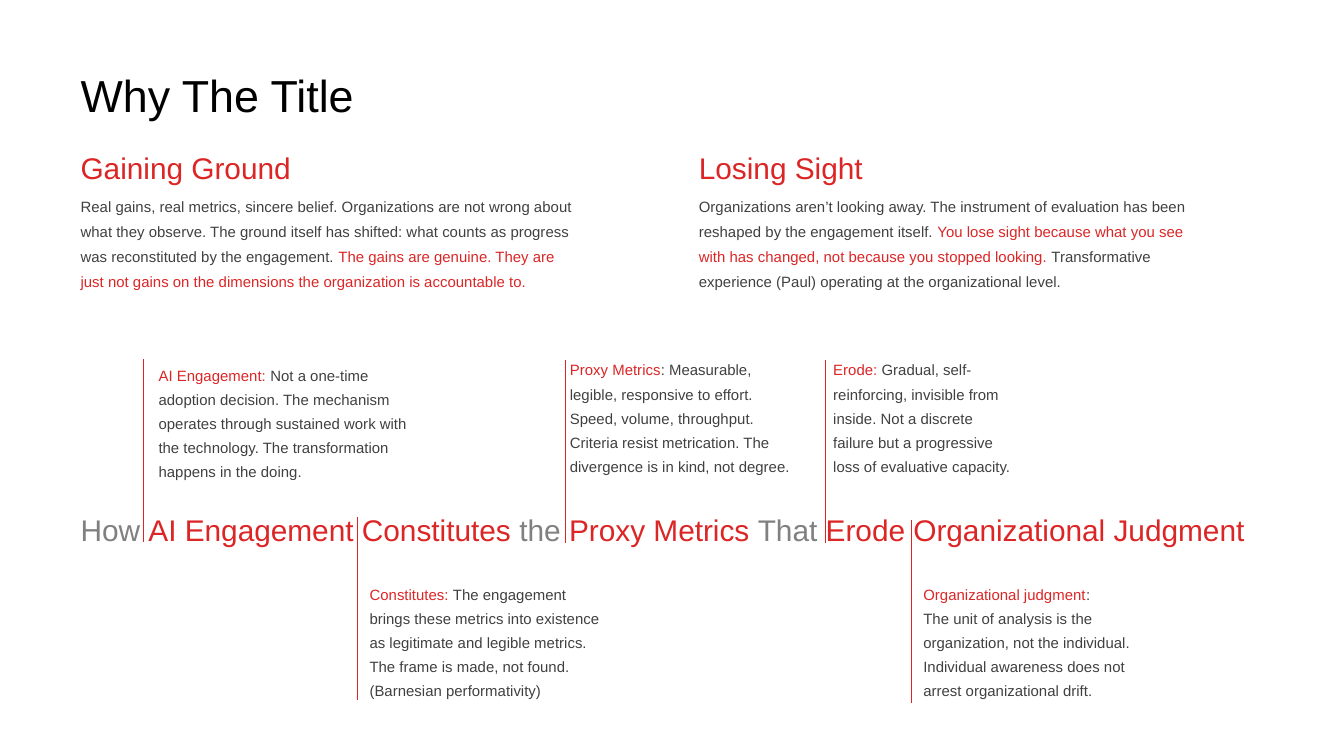
from lxml import etree
from pptx import Presentation
from pptx import util as u
from pptx.dml import color
from pptx.enum import shapes, text
from pptx.oxml import ns

COLOURS = {"title": "000000", "accent": "DC2525", "body": "404040", "muted": "808080"}
CELL = 0.1  # inches per grid column and row
LEFT, RIGHT = 6, 52  # columns where the two upper sections start


def grid(cells):
    return u.Inches(cells * CELL)


def add_span(para, words, size=8, colour="body", font="Arial"):
    span = para.add_run()
    span.text = words
    span.font.size = u.Pt(size)
    span.font.name = font
    span.font.color.rgb = color.RGBColor.from_string(COLOURS[colour])


class Slide:
    """Holds the text style and the current page."""

    def __init__(self, deck):
        self.page = deck.slides.add_slide(deck.slide_layouts[5])

    def fill(self, box, paragraphs, size=8, spacing=None, middle=False):
        frame = box.text_frame
        frame.word_wrap = True
        frame.auto_size = text.MSO_AUTO_SIZE.NONE
        frame.margin_left = frame.margin_right = 0
        frame.margin_top = frame.margin_bottom = 0
        frame.vertical_anchor = text.MSO_ANCHOR.MIDDLE if middle else text.MSO_ANCHOR.TOP
        for number, spans in enumerate(paragraphs):
            para = frame.add_paragraph() if number else frame.paragraphs[0]
            para.alignment = text.PP_ALIGN.LEFT
            if spacing:
                para.line_spacing = spacing
            for colour, words in spans:
                add_span(para, words, size=size, colour=colour)

    def title(self, words, left, top, width, height):
        box = self.page.shapes.title
        box.left, box.top, box.width, box.height = map(grid, (left, top, width, height))
        self.fill(box, [[("title", words)]], size=24, middle=True)

    def textbox(self, paragraphs, left, top, width, height, **style):
        box = self.page.shapes.add_textbox(*map(grid, (left, top, width, height)))
        self.fill(box, paragraphs, **style)

    def heading(self, spans, left, top, width, height):
        self.textbox([spans], left, top, width, height, size=16, middle=True)

    def section(self, heading, spans, left):
        self.heading([("accent", heading)], left, 10.7, 38, 3.5)
        self.textbox([spans], left, 14.2, 37, 8.8, spacing=1.4)

    def note(self, paragraphs, left, top, width):
        self.textbox(paragraphs, left, top, width, 9.9, spacing=1.35)

    def marker(self, column, top, length=13.6):
        line = self.page.shapes.add_connector(
            shapes.MSO_CONNECTOR.STRAIGHT,
            *map(grid, (column, top, column, top + length)))
        line.line.color.rgb = color.RGBColor.from_string(COLOURS["accent"])
        line.line.width = u.Pt(0.5)
        etree.SubElement(line._element.spPr, ns.qn("a:effectLst"))


def main():
    deck = Presentation()
    deck.slide_width, deck.slide_height = grid(100), grid(56.25)
    slide = Slide(deck)
    slide.title("Why The Title", LEFT, 5, 88, 4)

    # Two sections on the halves of the title
    slide.section("Gaining Ground", [
        ("body", "Real gains, real metrics, sincere belief. Organizations are not wrong "
                 "about what they observe. The ground itself has shifted: what counts as "
                 "progress was reconstituted by the engagement. "),
        ("accent", "The gains are genuine. They are just not gains on the dimensions the "
                   "organization is accountable to."),
    ], LEFT)
    slide.section("Losing Sight", [
        ("body", "Organizations aren’t looking away. The instrument of evaluation has been "
                 "reshaped by the engagement itself. "),
        ("accent", "You lose sight because what you see with has changed, not because you "
                   "stopped looking."),
        ("body", " Transformative experience (Paul) operating at the organizational level."),
    ], RIGHT)

    # Subtitle that the notes explain
    slide.heading([
        ("muted", "How "), ("accent", "AI Engagement Constitutes "),
        ("muted", "the "), ("accent", "Proxy Metrics "),
        ("muted", "That"), ("accent", " Erode Organizational Judgment"),
    ], LEFT, 37.9, 89.6, 3)

    # Notes above and below the subtitle: left, top, width, paragraphs
    notes = [
        (11.8, 26.8, 19, [[
            ("accent", "AI Engagement: "),
            ("body", "Not a one-time adoption decision. The mechanism operates through "
                     "sustained work with the technology. The transformation happens in "
                     "the doing.")]]),
        (27.5, 43.1, 17.3, [[
            ("accent", "Constitutes: "),
            ("body", "The engagement brings these metrics into existence as legitimate and "
                     "legible metrics. The frame is made, not found. (Barnesian "
                     "performativity)")]]),
        (42.4, 26.4, 16.8, [[
            ("accent", "Proxy Metrics"),
            ("body", ": Measurable, legible, responsive to effort. Speed, volume, "
                     "throughput. Criteria resist metrication. The divergence is in kind, "
                     "not degree.")]]),
        (62, 26.4, 13.4, [[
            ("accent", "Erode: "),
            ("body", "Gradual, self-reinforcing, invisible from inside. Not a discrete "
                     "failure but a progressive loss of evaluative capacity.")]]),
        (68.7, 43.1, 16.2, [
            [("accent", "Organizational judgment"), ("body", ":")],
            [("body", "The unit of analysis is the organization, not the individual. "
                      "Individual awareness does not arrest organizational drift.")]]),
    ]
    for left, top, width, paragraphs in notes:
        slide.note(paragraphs, left, top, width)

    # Lines that tie each note to its words
    for column, top in [(42.1, 26.8), (61.4, 26.8), (67.8, 38.7), (26.6, 38.5), (10.7, 26.7)]:
        slide.marker(column, top)

    deck.save("out.pptx")


if __name__ == "__main__":
    main()
